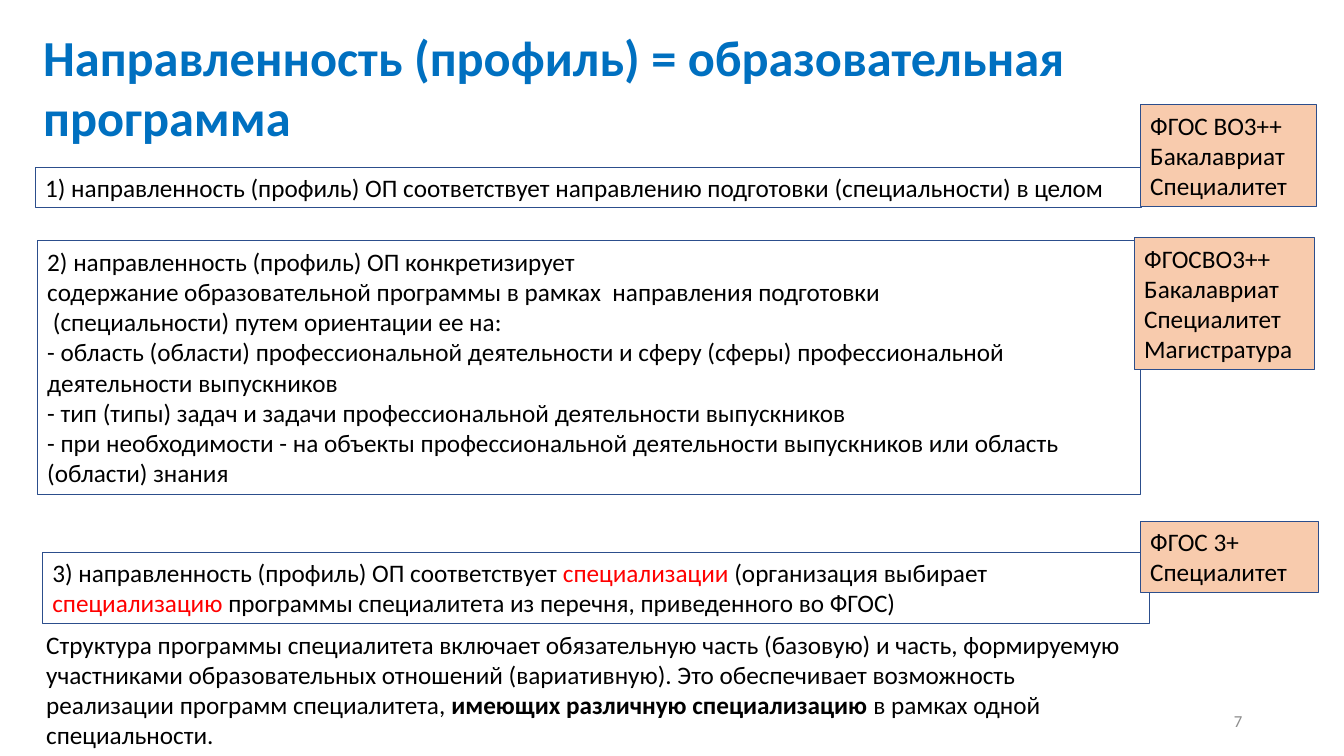
"""Build the slide on how a programme profile relates to the education standards."""
from pptx import Presentation
from pptx.dml.color import RGBColor
from pptx.enum.shapes import MSO_SHAPE
from pptx.enum.text import MSO_ANCHOR, MSO_AUTO_SIZE, PP_ALIGN
from pptx.util import Inches, Pt

RECT = MSO_SHAPE.RECTANGLE
TOP, MIDDLE = MSO_ANCHOR.TOP, MSO_ANCHOR.MIDDLE
LEFT, RIGHT = PP_ALIGN.LEFT, PP_ALIGN.RIGHT
GROW, FIXED = MSO_AUTO_SIZE.SHAPE_TO_FIT_TEXT, MSO_AUTO_SIZE.NONE
COLORS = {"title": "0070C0", "text": "000000", "accent": "FF0000",
          "number": "8C8C8C", "tag": "F8CBAD", "border": "2C4E8C"}
BODY = {"size": Pt(18), "name": "Calibri", "bold": False}
STYLES = {
    "text": BODY,
    "accent": BODY,
    "strong": {**BODY, "bold": True},
    "title": {**BODY, "size": Pt(36), "bold": True},
    "number": {**BODY, "size": Pt(12)},
}


def color(name):
    return RGBColor.from_string(COLORS[name])


def write(shape, lines, base="text", align=LEFT, anchor=TOP, fit=GROW):
    frame = shape.text_frame
    layout = {"word_wrap": True, "auto_size": fit, "vertical_anchor": anchor}
    for key, value in layout.items():
        setattr(frame, key, value)
    for row, line in enumerate(lines):
        para = frame.add_paragraph() if row else frame.paragraphs[0]
        para.alignment = align
        for words, style in [(line, base)] if isinstance(line, str) else line:
            run = para.add_run()
            run.text = words
            for key, value in STYLES[style].items():
                setattr(run.font, key, value)
            run.font.color.rgb = color(style if style in COLORS else "text")


deck = Presentation()
deck.slide_width, deck.slide_height = Inches(13.33), Inches(7.5)
slide = deck.slides.add_slide(deck.slide_layouts[6])

boxes = [
    ((0.35, 1.66, 10.97, 0.4), None, [
        "1) направленность (профиль) ОП соответствует направлению подготовки (специальности) в целом"]),
    ((0.37, 2.39, 10.94, 2.52), None, [
        "2) направленность (профиль) ОП конкретизирует",
        "содержание образовательной программы в рамках  направления подготовки",
        " (специальности) путем ориентации ее на:",
        "- область (области) профессиональной деятельности и сферу (сферы) профессиональной деятельности выпускников",
        "- тип (типы) задач и задачи профессиональной деятельности выпускников",
        "- при необходимости - на объекты профессиональной деятельности выпускников или область (области) знания"]),
    ((11.25, 2.36, 1.79, 1.31), "tag", [
        "ФГОСВО3++", "Бакалавриат", "Специалитет", "Магистратура"]),
    ((0.42, 5.48, 10.98, 0.71), None, [[
        ("3) направленность (профиль) ОП соответствует ", "text"),
        ("специализации ", "accent"),
        ("(организация выбирает ", "text"),
        ("специализацию ", "accent"),
        ("программы специалитета из перечня, приведенного во ФГОС)", "text")]]),
    ((11.31, 5.17, 1.77, 0.71), "tag", ["ФГОС 3+", "Специалитет"]),
    ((11.31, 1.04, 1.75, 1.01), "tag", [
        "ФГОС ВО3++", "Бакалавриат", "Специалитет"]),
]
for place, fill, lines in boxes:
    box = slide.shapes.add_shape(RECT, *map(Inches, place))
    box.shadow.inherit = False
    if fill:
        box.fill.solid()
        box.fill.fore_color.rgb = color(fill)
    else:
        box.fill.background()
    box.line.color.rgb = color("border")
    box.line.width = Pt(0.75)
    write(box, lines)

texts = [
    ((0.33, 0.21, 12.69, 0.71),
     ["Направленность (профиль) = образовательная программа"],
     {"base": "title"}),
    ((0.36, 6.19, 10.98, 1.31), [[
        ("Структура программы специалитета включает обязательную часть (базовую) и часть, "
         "формируемую участниками образовательных отношений (вариативную). Это обеспечивает "
         "возможность реализации программ специалитета, ", "text"),
        ("имеющих различную специализацию", "strong"),
        (" в рамках одной специальности.", "text")]], {}),
    ((9.42, 6.95, 3, 0.4), ["7"],
     {"base": "number", "align": RIGHT, "anchor": MIDDLE, "fit": FIXED}),
]
for place, lines, format in texts:
    write(slide.shapes.add_textbox(*map(Inches, place)), lines, **format)

deck.save("out.pptx")
